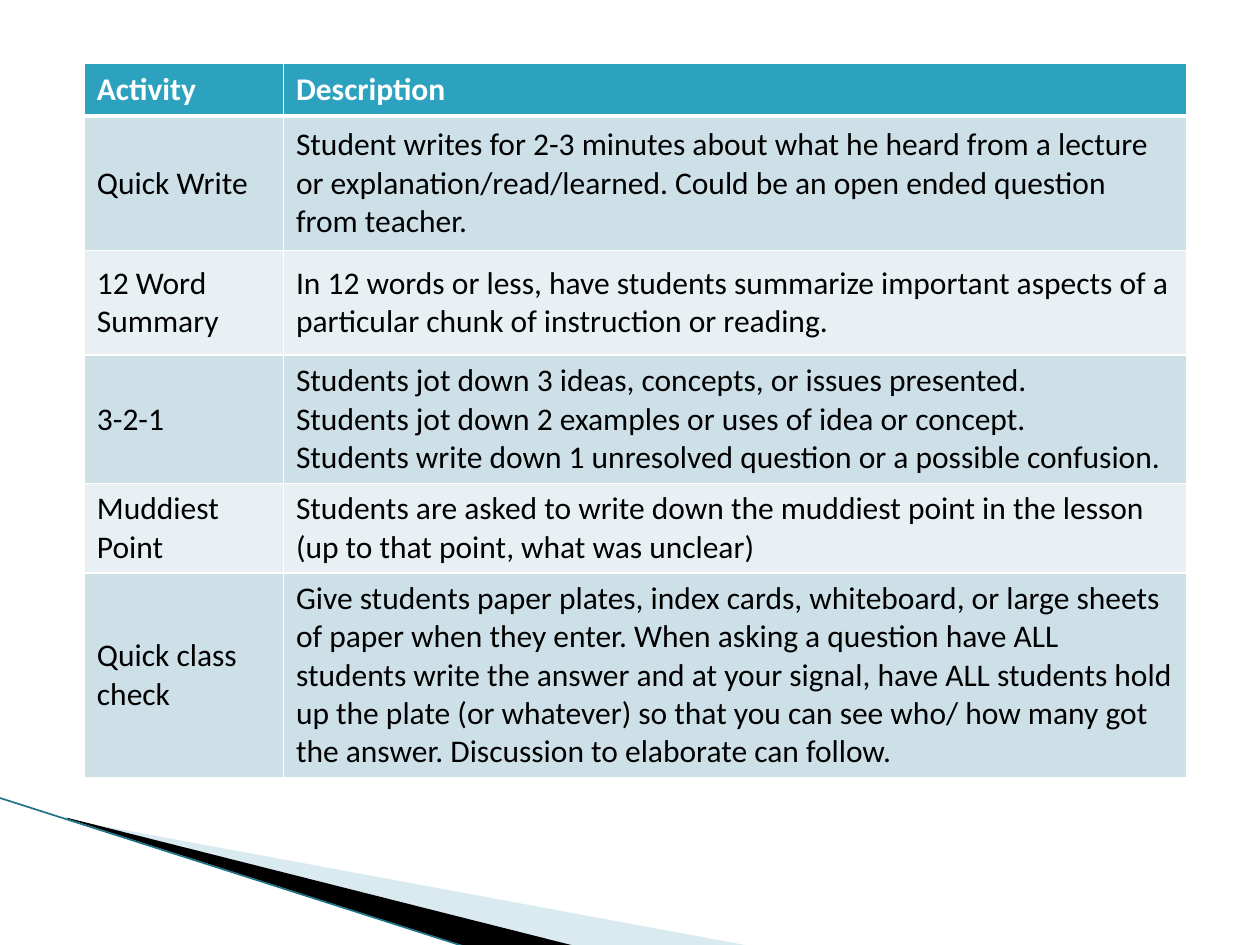
from lxml import etree
from pptx import Presentation
from pptx import util as u
from pptx.dml.color import RGBColor
from pptx.enum import shapes, text
from pptx.oxml import ns

WHITE, BLACK, TEAL = "FFFFFF", "000000", "2DA2BF"
BANDS = ["CDE0E8", "E8F0F4"]
COLUMN_WIDTHS = [113.8, 516.2]
ROW_HEIGHTS = [30.2, 77, 59.8, 73.2, 51, 117]
ACTIVITIES = [
    ("Activity", "Description"),
    ("Quick Write",
     "Student writes for 2-3 minutes about what he heard from a lecture or "
     "explanation/read/learned. Could be an open ended question from teacher."),
    ("12 Word\nSummary",
     "In 12 words or less, have students summarize important aspects of a "
     "particular chunk of instruction or reading."),
    ("3-2-1",
     "Students jot down 3 ideas, concepts, or issues presented.\n"
     "Students jot down 2 examples or uses of idea or concept.\n"
     "Students write down 1 unresolved question or a possible confusion."),
    ("Muddiest\nPoint",
     "Students are asked to write down the muddiest point in the lesson "
     "(up to that point, what was unclear)"),
    ("Quick class\ncheck",
     "Give students paper plates, index cards, whiteboard, or large sheets of "
     "paper when they enter. When asking a question have ALL students write the "
     "answer and at your signal, have ALL students hold up the plate (or whatever) "
     "so that you can see who/ how many got the answer. Discussion to elaborate "
     "can follow."),
]


def paint(color_format, color):
    color_format.rgb = RGBColor.from_string(color)


def fill_solid(fill, color):
    fill.solid()
    paint(fill.fore_color, color)


def add_wedge(page, points, color, opacity=100):
    start, *rest = [(u.Pt(x), u.Pt(y)) for x, y in points]
    builder = page.shapes.build_freeform(*start)
    builder.add_line_segments(rest, close=True)
    wedge = builder.convert_to_shape()
    wedge.shadow.inherit = False
    wedge.line.fill.background()
    fill_solid(wedge.fill, color)
    if opacity < 100:
        tint = next(wedge.element.spPr.iter(ns.qn("a:srgbClr")))
        etree.SubElement(tint, ns.qn("a:alpha"), val=str(opacity * 1000))


def add_line(page, start, end, color, width):
    points = [u.Pt(value) for value in (*start, *end)]
    line = page.shapes.add_connector(shapes.MSO_CONNECTOR.STRAIGHT, *points)
    paint(line.line.color, color)
    line.line.width = u.Pt(width)
    etree.SubElement(line.element.spPr, ns.qn("a:effectLst"))


def add_borders(cell, widths):
    """Draw white borders; widths are for left, right, top and bottom."""
    properties = cell._tc.get_or_add_tcPr()
    for side, width in zip("LRTB", widths):
        border = etree.SubElement(properties, ns.qn(f"a:ln{side}"), w=str(u.Pt(width)))
        solid = etree.SubElement(border, ns.qn("a:solidFill"))
        etree.SubElement(solid, ns.qn("a:srgbClr"), val=WHITE)


def fill_cell(cell, words, row):
    header = row == 0
    add_borders(cell, (1, 1, 3 if row == 1 else 1, 3 if header else 1))
    fill_solid(cell.fill, TEAL if header else BANDS[(row - 1) % 2])
    cell.vertical_anchor = text.MSO_ANCHOR.MIDDLE
    cell.text = words
    for para in cell.text_frame.paragraphs:
        para.font.name = "Calibri"
        para.font.size = u.Pt(18)
        para.font.bold = header
        paint(para.font.color, WHITE if header else BLACK)


def add_activity_table(page):
    table = page.shapes.add_table(
        len(ACTIVITIES), len(COLUMN_WIDTHS), u.Pt(48.2), u.Pt(36),
        u.Pt(sum(COLUMN_WIDTHS)), u.Pt(sum(ROW_HEIGHTS))).table
    for column, width in zip(table.columns, COLUMN_WIDTHS):
        column.width = u.Pt(width)
    for index, (row, entry) in enumerate(zip(table.rows, ACTIVITIES)):
        row.height = u.Pt(ROW_HEIGHTS[index])
        for cell, words in zip(row.cells, entry):
            fill_cell(cell, words, index)


def main():
    deck = Presentation()
    deck.slide_width, deck.slide_height = u.Pt(720), u.Pt(540)
    page = deck.slides.add_slide(deck.slide_layouts[6])
    add_wedge(page, [(39.6, 468.5), (428.4, 540.5), (328.3, 540.5), (39.6, 468)],
              "A0CBDC", opacity=40)
    add_wedge(page, [(38.2, 467.3), (329, 540.7), (267.8, 541.4), (38.9, 468)], BLACK)
    add_line(page, (-0.7, 455.8), (267.1, 541.4), "1F7388", 0.95)
    add_activity_table(page)
    deck.save("out.pptx")


if __name__ == "__main__":
    main()
